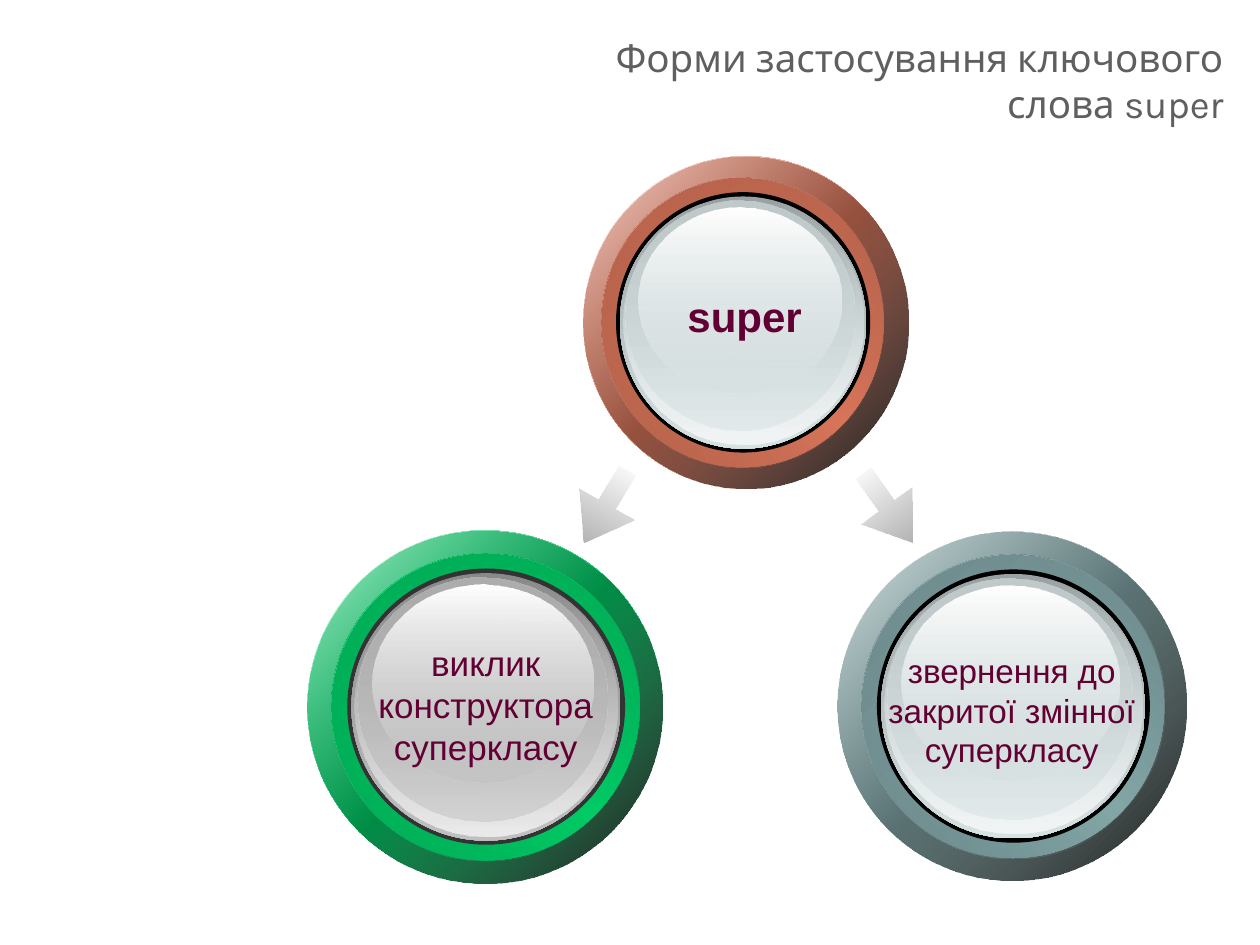
from lxml import etree
from pptx import Presentation
from pptx.dml.color import RGBColor
from pptx.enum.shapes import MSO_SHAPE as SHAPE
from pptx.enum.text import MSO_ANCHOR as ANCHOR, MSO_AUTO_SIZE as AUTO, PP_ALIGN as ALIGN
from pptx.oxml.ns import qn
from pptx.util import Inches, Pt


def paint(s, stops, angle=0):
    s.shadow.inherit = False
    s.line.fill.background()
    s.fill.solid()
    s.fill.fore_color.rgb = RGBColor.from_string(stops[0][1])
    if len(stops) == 1:
        return
    solid = s._element.spPr.find(qn("a:solidFill"))
    grad = etree.Element(qn("a:gradFill"), rotWithShape="1")
    gs_lst = etree.SubElement(grad, qn("a:gsLst"))
    for pos, color, alpha in stops:
        gs = etree.SubElement(gs_lst, qn("a:gs"), pos=str(pos * 1000))
        clr = etree.SubElement(gs, qn("a:srgbClr"), val=color)
        if alpha < 100:
            etree.SubElement(clr, qn("a:alpha"), val=str(alpha * 1000))
    etree.SubElement(grad, qn("a:lin"), ang=str(angle * 60000), scaled="1")
    solid.getparent().replace(solid, grad)


def add_text(box, text, size, color, font="Arial", bold=False, align=ALIGN.CENTER, wrap=True):
    s = slide.shapes.add_textbox(*[Inches(v) for v in box])
    tf = s.text_frame
    tf.word_wrap = wrap
    tf.auto_size = AUTO.SHAPE_TO_FIT_TEXT
    p = tf.paragraphs[0]
    p.alignment = align
    r = p.add_run()
    r.text = text
    r.font.name = font
    r.font.size = Pt(size)
    r.font.bold = bold
    r.font.color.rgb = RGBColor.from_string(color)
    return tf


prs = Presentation()
prs.slide_width, prs.slide_height = Inches(10), Inches(7.5)
slide = prs.slides.add_slide(prs.slide_layouts[6])

tf = add_text((4.2, 0.36, 5.61, 0.55), "Форми застосування ключового слова super",
              22, "5F5F5F", "Karla", align=ALIGN.RIGHT)
tf.auto_size = AUTO.NONE
tf.vertical_anchor = ANCHOR.MIDDLE

silver = ("000000", "99A1A2", "D6E1E2", "F2F5F5", "C1CBCC")
gray = ("333333", "898989", "C0C0C0", "EBEBEB", "AEAEAE")
buttons = [
    ((4.63, 1.24, 2.58, 2.64), -0.03, ("D8755A", "A55A45", "B1604A"), silver),
    ((6.65, 4.22, 2.77, 2.77), 0, ("83A6A7", "647F80", "6C8889"), silver),
    ((2.44, 4.21, 2.82, 2.8), 0, ("00CC66", "009C4E", "00A754"), gray),
]
for (left, top, width, height), shift, (ring, dark, mid), glass in buttons:
    rim, shade, face, light, tint = glass
    layers = [
        ((0, 0, 100, 100), 45, [(0, "FFFFFF", 100), (50, ring, 100), (100, "FFFFFF", 100)]),
        ((0, 0, 100, 100), 45, [(0, ring, 32), (100, "000000", 90)]),
        ((6.7, 6.5, 86.8, 87), 315, [(0, dark, 100), (50, ring, 100), (100, dark, 100)]),
        ((6.7, 6.5, 86.8, 87), 45, [(0, mid, 100), (100, ring, 0)]),
        ((11.2, 10.8, 78.2, 78.3), 0, [(0, rim, 100)]),
        ((12.4, 12.1, 75.7, 75.8), 90, [(0, shade, 100), (100, face, 100)]),
        ((13.4, 12.6, 74, 74), 90, [(0, face, 0), (100, light, 100)]),
        ((14.1, 13.3, 70.3, 69.2), 90, [(0, tint, 100), (100, face, 48)]),
        ((18.2, 15.3, 62.4, 56), 90, [(0, "FFFFFF", 100), (100, face, 38)]),
    ]
    group = slide.shapes.add_group_shape()
    for (x, y, w, h), angle, stops in layers:
        dx = shift if x else 0
        s = group.shapes.add_shape(
            SHAPE.OVAL, Inches(left + dx + width * x / 100), Inches(top + height * y / 100),
            Inches(width * w / 100), Inches(height * h / 100))
        paint(s, stops, angle)

for left, top, rotation in [(6.71, 3.78, 234.2), (4.47, 3.77, 300.2)]:
    s = slide.shapes.add_shape(SHAPE.LEFT_ARROW, Inches(left), Inches(top), Inches(0.67), Inches(0.5))
    s.adjustments[0] = 0.31
    s.adjustments[1] = 0.72
    s.rotation = rotation
    paint(s, [(0, "B2B2B2", 100), (100, "B2B2B2", 0)])

add_text((5.35, 2.26, 1.12, 0.5), "super", 24, "620033", bold=True, wrap=False)
add_text((2.83, 5.04, 2.05, 1.11), "виклик конструктора суперкласу", 20, "620033")
add_text((6.86, 5.11, 2.34, 1.06), "звернення до закритої змінної суперкласу", 19, "620033")

prs.save("out.pptx")
